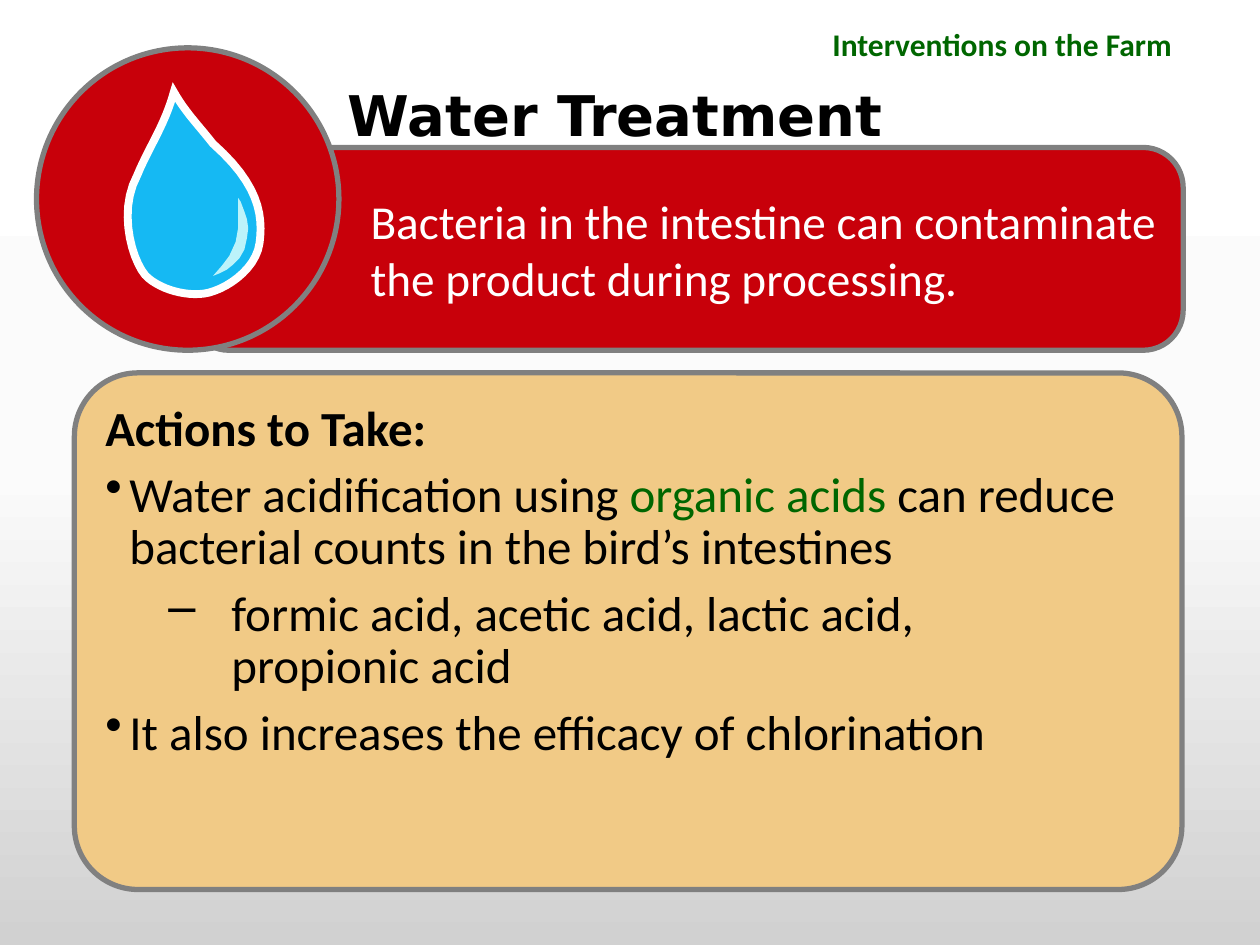
from copy import deepcopy

from lxml import etree
from pptx import Presentation
from pptx.dml.color import RGBColor
from pptx.enum.shapes import MSO_SHAPE
from pptx.enum.text import MSO_ANCHOR, MSO_AUTO_SIZE, PP_ALIGN
from pptx.oxml.ns import qn
from pptx.util import Inches, Pt

ROUNDED = MSO_SHAPE.ROUNDED_RECTANGLE
OVAL = MSO_SHAPE.OVAL
TOP, MIDDLE = MSO_ANCHOR.TOP, MSO_ANCHOR.MIDDLE
LEFT, RIGHT = PP_ALIGN.LEFT, PP_ALIGN.RIGHT
FIXED = MSO_AUTO_SIZE.NONE
TITLE_ONLY = 5

COLORS = {
    "red": "C8000A", "gray": "808080", "tan": "F1CA86", "green": "006600",
    "black": "000000", "white": "FFFFFF", "water": "15B9F3", "shine": "BCF3FA",
}
BACKGROUND = [(0, "FFFFFF"), (0.5, "FBFBFB"), (1, "D1D1D1")]
DROP_START = (1.18, 2.21)
DROP_CURVES = [
    ((1.07, 2.13), (0.92, 1.7), (1.09, 1.39)),
    ((1.18, 1.17), (1.31, 0.99), (1.38, 0.73)),
    ((1.47, 0.89), (1.58, 1), (1.69, 1.14)),
    ((2.05, 1.46), (2.09, 1.7), (2.06, 1.93)),
    ((2.03, 2.15), (1.77, 2.31), (1.62, 2.33)),
    ((1.47, 2.35), (1.29, 2.3), (1.18, 2.21)),
]
SHINE = [
    (1.89, 1.57), (1.91, 1.6), (1.94, 1.68), (1.96, 1.74), (1.97, 1.81), (1.96, 1.89),
    (1.94, 1.98), (1.9, 2.05), (1.85, 2.1), (1.8, 2.14), (1.74, 2.17), (1.69, 2.19),
    (1.76, 2.11), (1.82, 2.03), (1.87, 1.92), (1.89, 1.81), (1.89, 1.7),
]


def curve_points(start, curves, steps=12):
    """Return points along a chain of cubic Bézier curves."""
    points = [start]
    for first, second, end in curves:
        origin = points[-1]
        for step in range(1, steps + 1):
            t = step / steps
            weights = ((1 - t) ** 3, 3 * t * (1 - t) ** 2, 3 * t * t * (1 - t), t ** 3)
            corners = (origin, first, second, end)
            points.append(tuple(sum(w * c[axis] for w, c in zip(weights, corners))
                                for axis in (0, 1)))
    return points


class SlideBuilder:
    """Holds the style and the current slide."""

    font = "Calibri"

    def __init__(self, presentation):
        self.slide = presentation.slides.add_slide(presentation.slide_layouts[TITLE_ONLY])

    def color(self, name):
        return RGBColor.from_string(COLORS[name])

    def background(self, stops):
        fill = self.slide.background.fill
        fill.gradient()
        fill.gradient_angle = 270
        stop_list = self.slide.element.find(".//" + qn("a:gsLst"))
        stop_list.insert(1, deepcopy(stop_list[0]))
        for stop, (position, value) in zip(fill.gradient_stops, stops):
            stop.position = position
            stop.color.rgb = RGBColor.from_string(value)

    def paint(self, shape, fill, line=None, width=3):
        shape.shadow.inherit = False
        shape.fill.solid()
        shape.fill.fore_color.rgb = self.color(fill)
        if line:
            shape.line.color.rgb = self.color(line)
            shape.line.width = Pt(width)
        else:
            shape.line.fill.background()

    def panel(self, kind, box, fill, corner=None, anchor=MIDDLE):
        shape = self.slide.shapes.add_shape(kind, *map(Inches, box))
        self.paint(shape, fill, "gray")
        if corner:
            shape.adjustments[0] = corner
        shape.text_frame.word_wrap = True
        shape.text_frame.vertical_anchor = anchor
        return shape

    def outline(self, group, points, fill, line=None, width=3):
        start, *rest = [tuple(map(Inches, point)) for point in points]
        builder = group.shapes.build_freeform(*start)
        builder.add_line_segments(rest, close=True)
        shape = builder.convert_to_shape()
        self.paint(shape, fill, line, width)
        if line:
            line_xml = shape.element.spPr.find(qn("a:ln"))
            etree.SubElement(line_xml, qn("a:miter")).set("lim", "800000")

    def style(self, paragraph, size, color, bold=False, align=LEFT, font=None):
        paragraph.alignment = align
        paragraph.font.name = font or self.font
        paragraph.font.size = Pt(size)
        paragraph.font.bold = bold
        paragraph.font.color.rgb = self.color(color)

    def indent(self, paragraph, margin, first=0.0, bullet=None):
        properties = paragraph._p.get_or_add_pPr()
        properties.set("marL", str(Inches(margin)))
        properties.set("indent", str(Inches(first)))
        if bullet:
            paragraph.line_spacing = 0.9
            paragraph.space_before = Pt(7.5)
            mark = etree.Element(qn("a:buChar"), char=bullet)
            properties.insert_element_before(mark, "a:tabLst", "a:defRPr", "a:extLst")

    def bullet(self, frame, parts, margin, first, mark, level=0):
        paragraph = frame.add_paragraph()
        paragraph.level = level
        self.style(paragraph, 28, "black")
        self.indent(paragraph, margin, first, mark)
        for index, part in enumerate(parts):
            if index % 2:
                run = paragraph.add_run()
                run.text = part
                run.font.color.rgb = self.color("green")
            else:
                for row, text in enumerate(part.split("\n")):
                    if row:
                        paragraph.add_line_break()
                    paragraph.add_run().text = text

    def title(self, text, box):
        title = self.slide.shapes.title
        title.left, title.top, title.width, title.height = map(Inches, box)
        title.text_frame.auto_size = FIXED
        title.text_frame.vertical_anchor = TOP
        title.text_frame.text = text
        self.style(title.text_frame.paragraphs[0], 32, "black", True, font="DejaVu Sans")

    def label(self, text, box):
        frame = self.slide.shapes.add_textbox(*map(Inches, box)).text_frame
        frame.word_wrap = True
        frame.text = text
        self.style(frame.paragraphs[0], 18, "green", True, RIGHT)


def main():
    presentation = Presentation()
    presentation.slide_width, presentation.slide_height = Inches(10), Inches(7.5)
    builder = SlideBuilder(presentation)
    builder.background(BACKGROUND)
    builder.title("Water Treatment", (2.66, 0.59, 5.2, 0.64))

    banner = builder.panel(ROUNDED, (1.5, 1.17, 7.89, 1.61), "red", 0.197)
    banner.text_frame.text = (
        "Bacteria in the intestine can contaminate the product during processing.")
    builder.style(banner.text_frame.paragraphs[0], 27, "white")
    builder.indent(banner.text_frame.paragraphs[0], 1.25)

    builder.panel(OVAL, (0.29, 0.38, 2.4, 2.4), "red")
    drop = builder.slide.shapes.add_group_shape()
    builder.outline(drop, curve_points(DROP_START, DROP_CURVES), "water", "white", 4.5)
    builder.outline(drop, SHINE, "shine")

    actions = builder.panel(ROUNDED, (0.59, 2.96, 8.79, 4.1), "tan", 0.123, TOP).text_frame
    actions.text = "Actions to Take:"
    builder.style(actions.paragraphs[0], 28, "black", True)
    builder.bullet(actions, ["Water acidification using ", "organic acids ",
                             "can reduce bacterial counts in the bird’s intestines"],
                   0.19, -0.19, "•")
    builder.bullet(actions, ["formic acid, acetic acid, lactic acid, \npropionic acid"],
                   1, -0.5, "–", 1)
    builder.bullet(actions, ["It also increases the efficacy of chlorination"],
                   0.19, -0.19, "•")

    builder.label("Interventions on the Farm", (6.32, 0.15, 3.08, 0.4))
    presentation.save("out.pptx")


if __name__ == "__main__":
    main()
